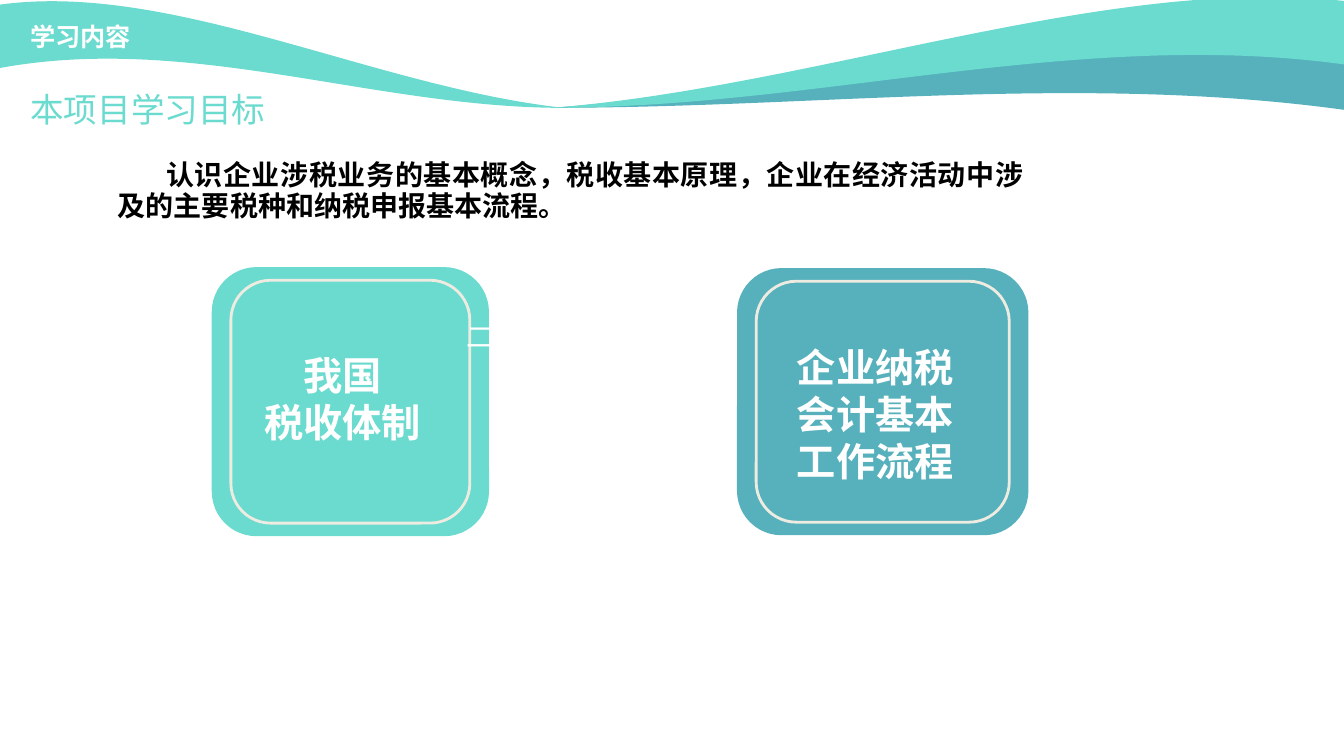
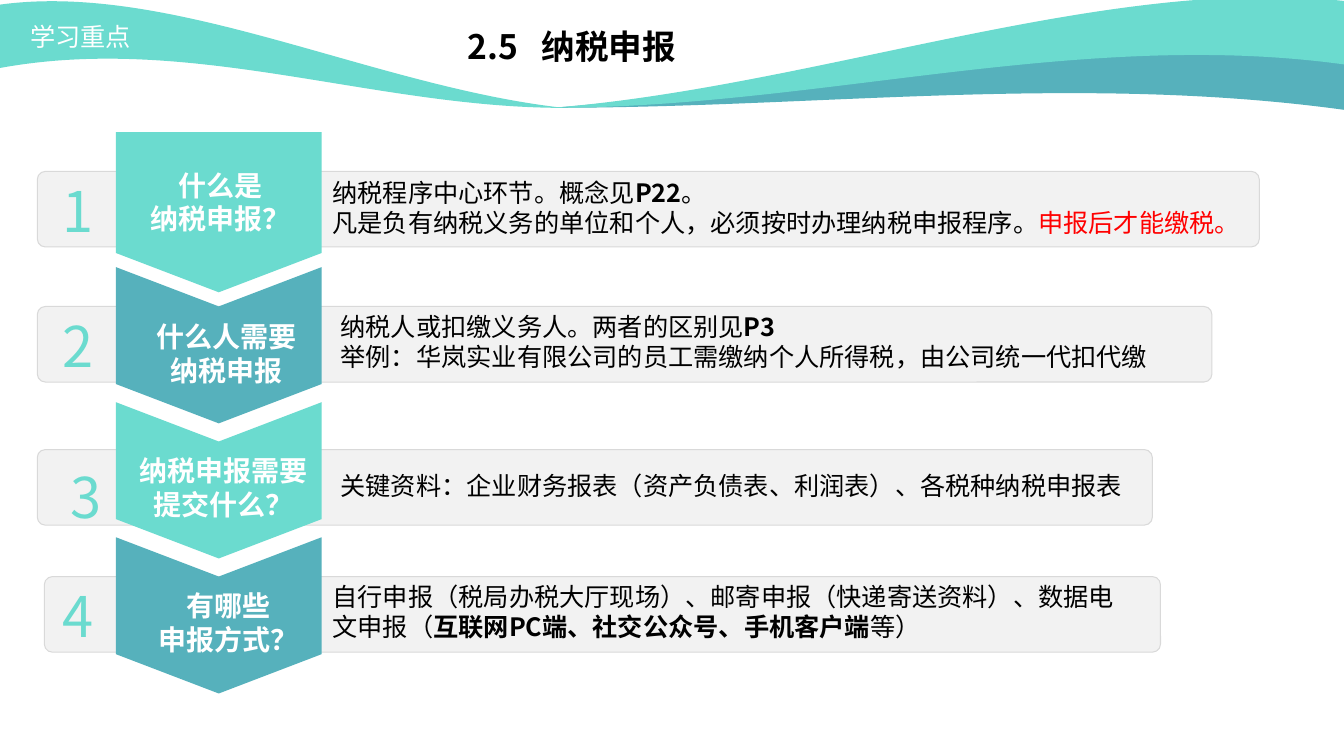
from dataclasses import dataclass

from lxml.etree import SubElement
from pptx import Presentation
from pptx.dml.color import RGBColor
from pptx.enum.shapes import MSO_SHAPE
from pptx.enum.text import MSO_ANCHOR, MSO_AUTO_SIZE, PP_ALIGN
from pptx.oxml.ns import qn
from pptx.util import Inches, Pt

FONT = "Noto Sans CJK SC"
MINT = RGBColor(0x6B, 0xDB, 0xCF)
TEAL = RGBColor(0x56, 0xB1, 0xBC)
WHITE = RGBColor(0xFF, 0xFF, 0xFF)
BLACK = RGBColor(0x00, 0x00, 0x00)
RED = RGBColor(0xFF, 0x00, 0x00)
CREAM = RGBColor(0xEE, 0xEC, 0xE1)
BAR_FILL = RGBColor(0xF2, 0xF2, 0xF2)
BAR_LINE = RGBColor(0xD9, 0xD9, 0xD9)

SLIDE_WIDTH, SLIDE_HEIGHT = 13.33, 7.5
TITLE_ONLY = 5

# Each wave: colour, the Bezier curve leaving the tip, and the one returning to it.
WAVES = [
    (TEAL, [(5.49, 1.07), (8.12, 0.86), (10.97, 0.2), (13.33, 0.46)],
     [(13.33, 1.09), (10.7, 0.73), (8.12, 1.07), (5.49, 1.07)]),
    (MINT, [(5.48, 1.07), (8.11, 0.86), (10.97, -0.25), (13.33, 0.01)],
     [(13.33, 0.64), (10.7, 0.28), (8.11, 1.07), (5.48, 1.07)]),
    (MINT, [(5.59, 1.07), (3.69, 0.86), (1.68, -0.2), (-0.03, 0.05)],
     [(-0.03, 0.68), (1.87, 0.32), (3.69, 1.07), (5.59, 1.07)]),
]

ROW_TOP, ROW_PITCH = 1.31, 1.34
CHEVRON_LEFT, CHEVRON_WIDTH, CHEVRON_POINT = 1.15, 2.04, 0.39
BAR_HEIGHT = 0.75


@dataclass
class Step:
    """One row; offsets are measured from the top of its chevron."""
    heading: list
    answer: list
    bar_left: float
    bar_width: float
    heading_box: tuple
    answer_left: float
    answer_width: float
    bar_offset: float = 0.39
    answer_drop: float = 0
    number_shift: float = 0


STEPS = [
    Step(["什么是", "纳税申报？"],
         [[("纳税程序中心环节。概念见",), ("P22", True), ("。",)],
          [("凡是负有纳税义务的单位和个人，必须按时办理纳税申报程序。",),
           ("申报后才能缴税。", False, RED)]],
         0.37, 12.12, (1.33, 0.31, 1.71), 3.2, 9.37, answer_drop=0.01),
    Step(["什么人需要纳税申报"],
         [[("纳税人或扣缴义务人。两者的区别见",), ("P3", True)],
          "举例：华岚实业有限公司的员工需缴纳个人所得税，由公司统一代扣代缴"],
         0.37, 11.65, (1.39, 0.47, 1.71), 3.28, 8.43),
    Step(["纳税申报需要提交什么？"],
         ["关键资料：企业财务报表（资产负债表、利润表）、各税种纳税申报表"],
         0.37, 11.06, (1.23, 0.46, 1.97), 3.28, 8.03,
         bar_offset=0.47, answer_drop=0.16, number_shift=0.08),
    Step(["有哪些", "申报方式？"],
         [[("自行申报（税局办税大厅现场）、邮寄申报（快递寄送资料）、数据电文申报（",),
           ("互联网PC端、社交公众号、手机客户端", True), ("等）",)]],
         0.44, 11.07, (1.41, 0.46, 1.71), 3.2, 7.95),
]


def format_run(run, size, color, bold):
    run.font.name = FONT
    run.font.size = Pt(size)
    run.font.bold = bold
    run.font.color.rgb = color
    SubElement(run.font._element, qn("a:ea"), typeface=FONT)


def place(shape, left, top, width, height):
    shape.left, shape.top = Inches(left), Inches(top)
    shape.width, shape.height = Inches(width), Inches(height)


def write(shape, paragraphs, size, color, bold=False, align=PP_ALIGN.LEFT):
    """Each paragraph is a string or a list of (text, bold, color) parts."""
    frame = shape.text_frame
    frame.word_wrap = True
    frame.auto_size = MSO_AUTO_SIZE.NONE
    frame.vertical_anchor = MSO_ANCHOR.TOP
    for index, parts in enumerate(paragraphs):
        paragraph = frame.add_paragraph() if index else frame.paragraphs[0]
        paragraph.alignment = align
        for part in [(parts,)] if isinstance(parts, str) else parts:
            text, strong, tint = part + (None, bold, color)[len(part):]
            run = paragraph.add_run()
            run.text = text
            format_run(run, size, tint, strong)
    return frame.paragraphs[0]


def add_text(slide, box, paragraphs, size, color, **style):
    shape = slide.shapes.add_textbox(*map(Inches, box))
    return write(shape, paragraphs, size, color, **style)


def paint(shape, fill, line=None, line_width=0):
    shape.shadow.inherit = False
    shape.fill.solid()
    shape.fill.fore_color.rgb = fill
    if line is None:
        shape.line.fill.background()
    else:
        shape.line.color.rgb = line
        shape.line.width = Pt(line_width)


def add_round_box(slide, box, fill, line=None, line_width=0, radius=None):
    shape = slide.shapes.add_shape(MSO_SHAPE.ROUNDED_RECTANGLE, *map(Inches, box))
    if radius is not None:
        shape.adjustments[0] = radius / min(box[2:])
    paint(shape, fill, line, line_width)


def add_outline(slide, points, fill):
    corners = [(Inches(x), Inches(y)) for x, y in points]
    builder = slide.shapes.build_freeform(*corners[0], scale=1.0)
    builder.add_line_segments(corners[1:], close=True)
    shape = builder.convert_to_shape()
    paint(shape, fill)
    return shape


def add_wave(slide, color, outward, homeward):
    """Joins the curve ends by lines, then bends the first and third line."""
    shape = add_outline(slide, [outward[0], outward[3], homeward[0], homeward[3]], color)
    lines = list(shape._element.iter(qn("a:lnTo")))
    for line, controls in ((lines[0], outward), (lines[2], homeward)):
        line.tag = qn("a:cubicBezTo")
        line.clear()
        for x, y in controls[1:]:
            SubElement(line, qn("a:pt"), x=str(Inches(x) - shape.left),
                       y=str(Inches(y) - shape.top))


def start_slide(presentation, section, title, title_box, title_color,
                section_bold=False, title_bold=False):
    """Adds a slide with the wave band, section label and title."""
    slide = presentation.slides.add_slide(presentation.slide_layouts[TITLE_ONLY])
    for wave in WAVES:
        add_wave(slide, *wave)
    add_text(slide, (0.2, 0.16, 1.89, 0.4), [section], 18, WHITE, bold=section_bold)
    place(slide.shapes.title, *title_box)
    write(slide.shapes.title, [title], 24, title_color, bold=title_bold)
    return slide


def add_card(slide, box, fill, text_box, lines):
    left, top, width, height = box
    inset_x, inset_y = 0.19, 0.13
    add_round_box(slide, box, fill)
    add_round_box(slide, (left + inset_x, top + inset_y, width - 2 * inset_x,
                          height - 2 * inset_y), fill, CREAM, 2)
    add_text(slide, text_box, lines, 28, WHITE, bold=True, align=PP_ALIGN.CENTER)


def add_chevron(slide, top, fill, flat):
    right, middle = CHEVRON_LEFT + CHEVRON_WIDTH, CHEVRON_LEFT + CHEVRON_WIDTH / 2
    shoulder = top + (1.2 if flat else 1.16)
    points = [(right, top), (right, shoulder), (middle, shoulder + CHEVRON_POINT),
              (CHEVRON_LEFT, shoulder), (CHEVRON_LEFT, top)]
    if not flat:
        points.append((middle, top + CHEVRON_POINT))
    add_outline(slide, points, fill)


def add_step(slide, index, step):
    top = ROW_TOP + index * ROW_PITCH
    bar_top = top + step.bar_offset
    add_round_box(slide, (step.bar_left, bar_top, step.bar_width, BAR_HEIGHT),
                  BAR_FILL, BAR_LINE, radius=0.08)
    add_text(slide, (step.answer_left, bar_top + step.answer_drop,
                     step.answer_width, 0.7), step.answer, 18, BLACK)
    add_text(slide, (0.44 + step.number_shift, bar_top + step.number_shift, 0.66, 0.77),
             [str(index + 1)], 40, MINT, align=PP_ALIGN.CENTER)
    add_chevron(slide, top, TEAL if index % 2 else MINT, flat=index == 0)
    left, offset, width = step.heading_box
    add_text(slide, (left, top + offset, width, 0.77), step.heading, 20, WHITE,
             bold=True, align=PP_ALIGN.CENTER)


def build_goals_slide(presentation):
    slide = start_slide(presentation, "学习内容", "本项目学习目标",
                        (0.2, 0.83, 2.91, 0.5), MINT, section_bold=True)
    add_card(slide, (7.31, 2.66, 2.89, 2.65), TEAL, (7.54, 3.36, 2.28, 1.5),
             ["企业纳税", "会计基本", "工作流程"])
    add_card(slide, (2.1, 2.65, 2.75, 2.67), MINT, (2.49, 3.44, 1.81, 1.03),
             ["我国", "税收体制"])
    add_text(slide, (4.46, 3.12, 0.62, 0.43), ["二"], 20, WHITE, align=PP_ALIGN.CENTER)
    summary = add_text(
        slide, (1.07, 1.54, 9.18, 0.71),
        ["认识企业涉税业务的基本概念，税收基本原理，企业在经济活动中涉及的主要税种和纳税申报基本流程。"],
        20, BLACK, bold=True, align=PP_ALIGN.JUSTIFY)
    summary.line_spacing = Pt(22)
    summary._p.get_or_add_pPr().set("indent", str(Inches(0.48)))


def build_filing_slide(presentation):
    slide = start_slide(presentation, "学习重点", "2.5\t纳税申报",
                        (4.54, 0.21, 2.92, 0.5), BLACK, title_bold=True)
    properties = slide.shapes.title.text_frame.paragraphs[0]._p.get_or_add_pPr()
    tabs = SubElement(properties, qn("a:tabLst"))
    SubElement(tabs, qn("a:tab"), pos=str(Inches(0.73)), algn="l")
    for index, step in enumerate(STEPS):
        add_step(slide, index, step)


def main():
    presentation = Presentation()
    presentation.slide_width = Inches(SLIDE_WIDTH)
    presentation.slide_height = Inches(SLIDE_HEIGHT)
    build_goals_slide(presentation)
    build_filing_slide(presentation)
    presentation.save("out.pptx")


if __name__ == "__main__":
    main()
